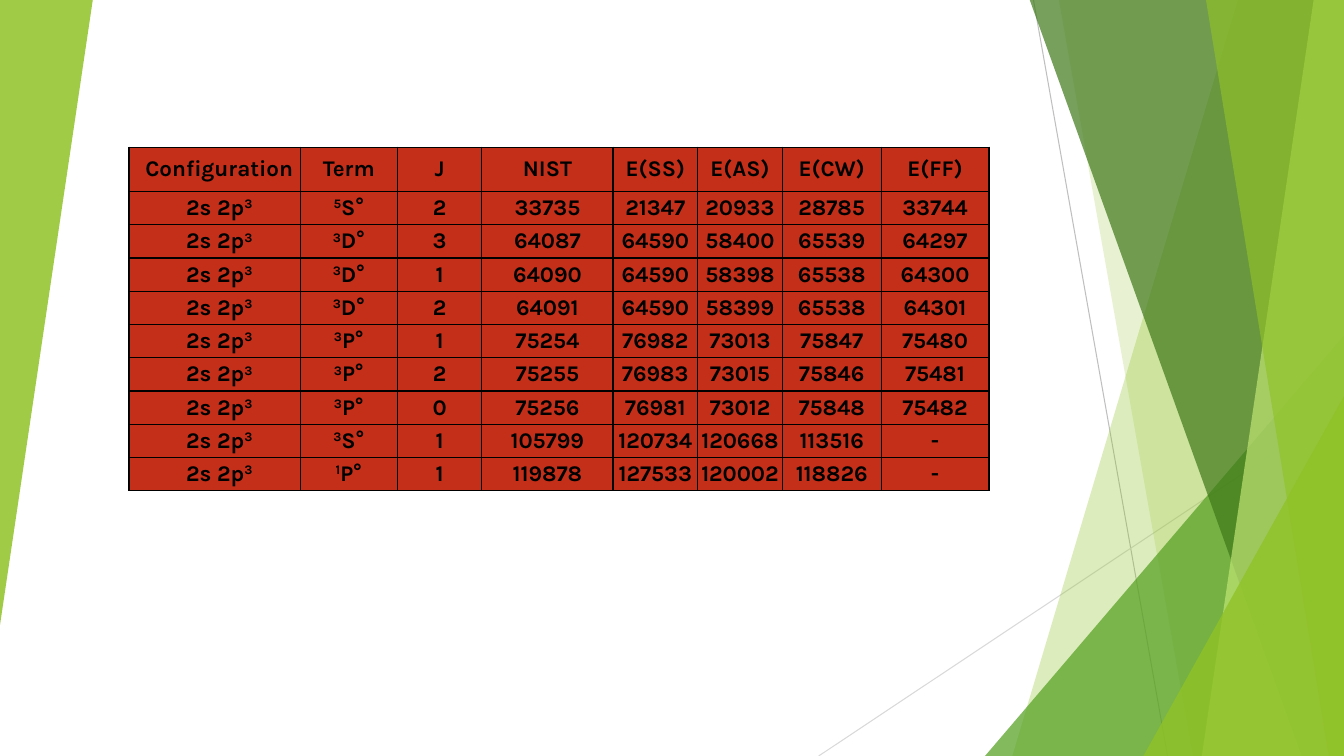
from lxml import etree
from pptx import Presentation
from pptx.dml.color import RGBColor
from pptx.enum.shapes import MSO_CONNECTOR, MSO_SHAPE
from pptx.enum.text import MSO_ANCHOR, PP_ALIGN
from pptx.oxml.ns import qn
from pptx.util import Inches, Pt

STRAIGHT = MSO_CONNECTOR.STRAIGHT
TRIANGLE = MSO_SHAPE.ISOSCELES_TRIANGLE
MIDDLE = MSO_ANCHOR.MIDDLE
CENTER = PP_ALIGN.CENTER

BLACK = RGBColor(0x00, 0x00, 0x00)
RED = RGBColor(0xC4, 0x2F, 0x1A)
LIME = RGBColor(0x90, 0xC2, 0x26)
GREEN = RGBColor(0x54, 0xA0, 0x21)
DARK = RGBColor(0x3F, 0x78, 0x19)
PALE = RGBColor(0xC0, 0xE4, 0x74)
GRAY = RGBColor(0xBF, 0xBF, 0xBF)
SILVER = RGBColor(0xD9, 0xD9, 0xD9)

WIDE, HIGH, TOP = 13.33, 7.5, -0.01
FONT = "Karla"

HEAD = ["Configuration", "Term", "J", "NIST", "E(SS)", "E(AS)", "E(CW)", "E(FF)"]
CONFIG = "2s 2p^3"
LEVELS = [
    ("^5^S°", "2", "33735", "21347", "20933", "28785", "33744"),
    ("^3^D°", "3", "64087", "64590", "58400", "65539", "64297"),
    ("^3^D°", "1", "64090", "64590", "58398", "65538", "64300"),
    ("^3^D°", "2", "64091", "64590", "58399", "65538", "64301"),
    ("^3^P°", "1", "75254", "76982", "73013", "75847", "75480"),
    ("^3^P°", "2", "75255", "76983", "73015", "75846", "75481"),
    ("^3^P°", "0", "75256", "76981", "73012", "75848", "75482"),
    ("^3^S°", "1", "105799", "120734", "120668", "113516", "-"),
    ("^1^P°", "1", "119878", "127533", "120002", "118826", "-"),
]
COLS = [1.7, 0.96, 0.84, 1.3, 0.84, 0.84, 0.98, 1.07]
HEAD_H, ROW_H = 0.44, 0.33

LINES = [
    (10.25, 0, 11.58, HIGH, GRAY),
    (WIDE, 4.03, 8.12, HIGH, SILVER),
]
FACETS = [
    ("band", (12.28, 10.04), LIME, 30),
    ("band", (10.5, 11.83), LIME, 20),
    ("wedge", (9.77, 3.33, 3.56, 4.17, 0), GREEN, 72),
    ("band", (10.21, 12.91), DARK, 70),
    ("band", (13.03, 11.92), PALE, 70),
    ("band", (11.96, 13.18), LIME, 65),
    ("wedge", (11.34, 3.93, 1.99, 3.57, 0), LIME, 80),
    ("wedge", (0, 0, 0.92, 6.2, 180), LIME, 85),
]


def add_line(slide, x1, y1, x2, y2, color):
    line = slide.shapes.add_connector(
        STRAIGHT, Inches(x1), Inches(y1), Inches(x2), Inches(y2))
    line.line.color.rgb = color
    line.line.width = Pt(0.75)
    etree.SubElement(line._element.spPr, qn("a:effectLst"))


def add_band(slide, top_x, low_x):
    pts = [(top_x, TOP), (WIDE, TOP), (WIDE, HIGH), (low_x, HIGH)]
    pts = [(Inches(x), Inches(y)) for x, y in pts]
    path = slide.shapes.build_freeform(*pts[0])
    path.add_line_segments(pts[1:], close=True)
    return path.convert_to_shape()


def add_wedge(slide, x, y, w, h, turn):
    wedge = slide.shapes.add_shape(
        TRIANGLE, Inches(x), Inches(y), Inches(w), Inches(h))
    wedge.adjustments[0] = 1
    wedge.rotation = turn
    return wedge


def tint(shape, color, alpha):
    shape.shadow.inherit = False
    shape.line.fill.background()
    shape.fill.solid()
    shape.fill.fore_color.rgb = color
    node = shape._element.spPr.find(qn("a:solidFill"))[0]
    etree.SubElement(node, qn("a:alpha"), val=str(alpha * 1000))


def put_text(frame, text, size=16, color=BLACK, bold=True, align=CENTER):
    para = frame.paragraphs[0]
    para.alignment = align
    for i, part in enumerate(text.split("^")):
        if not part:
            continue
        run = para.add_run()
        run.text = part
        run.font.name = FONT
        run.font.size = Pt(size)
        run.font.bold = bold
        run.font.color.rgb = color
        if i % 2:
            run.font._element.set("baseline", "30000")


def add_edges(cell, color, width=1):
    props = cell._tc.get_or_add_tcPr()
    for side in ("lnL", "lnR", "lnT", "lnB"):
        edge = etree.SubElement(props, qn("a:" + side), w=str(Pt(width)))
        fill = etree.SubElement(edge, qn("a:solidFill"))
        etree.SubElement(fill, qn("a:srgbClr"), val=str(color))


def add_grid(slide, x, y):
    rows = [HEAD] + [(CONFIG, *level) for level in LEVELS]
    tall = [HEAD_H] + [ROW_H] * len(LEVELS)
    grid = slide.shapes.add_table(
        len(rows), len(COLS), Inches(x), Inches(y),
        Inches(sum(COLS)), Inches(sum(tall))).table
    grid.first_row = grid.horz_banding = False
    for col, w in zip(grid.columns, COLS):
        col.width = Inches(w)
    for r, row in enumerate(rows):
        grid.rows[r].height = Inches(tall[r])
        for c, text in enumerate(row):
            cell = grid.cell(r, c)
            cell.margin_left = Inches(0 if c else 0.09)
            cell.margin_right = cell.margin_top = cell.margin_bottom = 0
            cell.vertical_anchor = MIDDLE
            add_edges(cell, BLACK)
            cell.fill.solid()
            cell.fill.fore_color.rgb = RED
            put_text(cell.text_frame, text)


def main():
    deck = Presentation()
    deck.slide_width, deck.slide_height = Inches(WIDE), Inches(HIGH)
    slide = deck.slides.add_slide(deck.slide_layouts[6])
    for line in LINES:
        add_line(slide, *line)
    for kind, spots, color, alpha in FACETS:
        draw = add_band if kind == "band" else add_wedge
        tint(draw(slide, *spots), color, alpha)
    add_grid(slide, 1.28, 1.46)
    deck.save("out.pptx")


if __name__ == "__main__":
    main()
